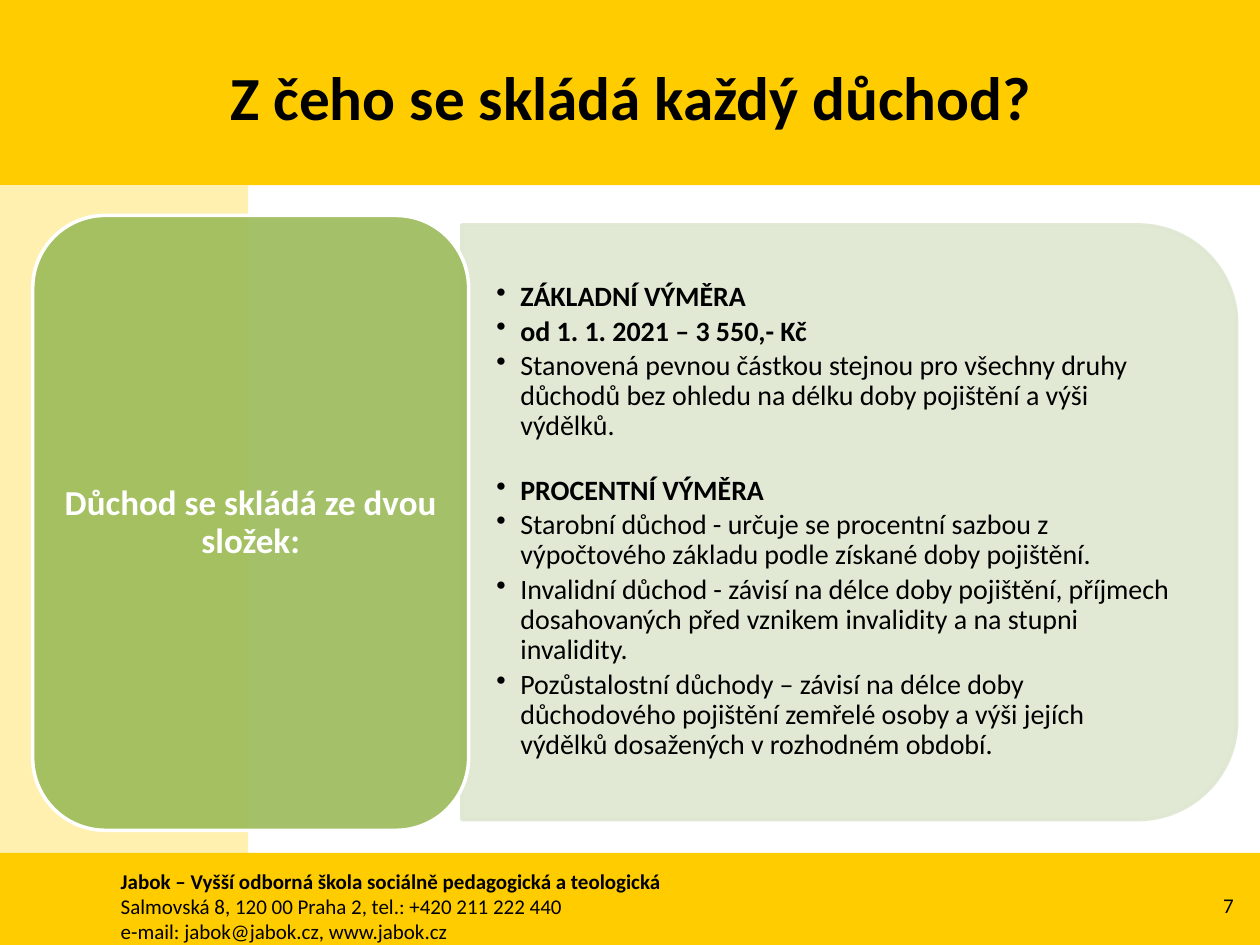
import pptx
import pptx.dml.color
import pptx.enum.shapes
import pptx.enum.text
import pptx.oxml
import pptx.oxml.ns
import pptx.util
from pptx.util import Inches

SHAPE = pptx.enum.shapes.MSO_SHAPE
ALIGN = pptx.enum.text.PP_ALIGN
ANCHOR = pptx.enum.text.MSO_ANCHOR


def color(value):
    return pptx.dml.color.RGBColor.from_string(value)


class PensionSlide:
    """Holds the style and the slide that its elements are drawn on."""

    font = "Calibri"
    band = "FFCC00"
    side = "FFF0AF"
    panel = "DEE7D1"
    accent = "9BBB59"
    ink = "000000"
    paper = "FFFFFF"

    def __init__(self, presentation):
        self.slide = presentation.slides.add_slide(presentation.slide_layouts[6])

    def shape(self, kind, box, fill, opacity=100, outline=None, outline_opacity=100, rotation=0):
        shape = self.slide.shapes.add_shape(kind, *map(Inches, box))
        shape.shadow.inherit = False
        shape.rotation = rotation
        shape.fill.solid()
        shape.fill.fore_color.rgb = color(fill)
        self.fade(shape.fill, opacity)
        if outline:
            shape.line.width = pptx.util.Pt(2)
            shape.line.color.rgb = color(outline)
            self.fade(shape.line.fill, outline_opacity)
        else:
            shape.line.fill.background()

    def fade(self, fill, opacity):
        if opacity < 100:
            tint = fill._xPr.find(".//" + pptx.oxml.ns.qn("a:srgbClr"))
            alpha = pptx.oxml.parse_xml(f'<a:alpha {pptx.oxml.ns.nsdecls("a")} val="{opacity * 1000}"/>')
            tint.append(alpha)

    def text(self, box, lines, size, ink=ink, align=ALIGN.LEFT, anchor=ANCHOR.MIDDLE,
             insets=(0.1, 0.05), spacing=1, bullets=False):
        frame = self.slide.shapes.add_textbox(*map(Inches, box)).text_frame
        frame.word_wrap = True
        frame.vertical_anchor = anchor
        frame.margin_left = frame.margin_right = Inches(insets[0])
        frame.margin_top = frame.margin_bottom = Inches(insets[1])
        for index, (words, bold, after) in enumerate(lines):
            paragraph = frame.add_paragraph() if index else frame.paragraphs[0]
            if bullets:
                self.bullet(paragraph)
            paragraph.alignment = align
            paragraph.line_spacing = spacing
            paragraph.space_after = pptx.util.Pt(after)
            run = paragraph.add_run()
            run.text = words
            run.font.name = self.font
            run.font.size = pptx.util.Pt(size)
            run.font.bold = bold
            run.font.color.rgb = color(ink)

    def bullet(self, paragraph):
        properties = paragraph._p.get_or_add_pPr()
        properties.set("marL", str(Inches(0.19)))
        properties.set("indent", str(Inches(-0.19)))
        properties.append(pptx.oxml.parse_xml(f'<a:buChar {pptx.oxml.ns.nsdecls("a")} char="•"/>'))


def main():
    presentation = pptx.Presentation()
    presentation.slide_width = Inches(10)
    presentation.slide_height = Inches(7.5)
    page = PensionSlide(presentation)

    page.shape(SHAPE.RECTANGLE, (0, 0, 10, 1.47), page.band)
    page.shape(SHAPE.RECTANGLE, (0, 1.47, 1.97, 5.3), page.side)
    page.shape(SHAPE.RECTANGLE, (0, 6.77, 10, 0.73), page.band)

    school = [
        ("Jabok – Vyšší odborná škola sociálně pedagogická a teologická", True, 0),
        ("Salmovská 8, 120 00 Praha 2, tel.: +420 211 222 440", False, 0),
        ("e-mail: jabok@jabok.cz, www.jabok.cz", False, 0),
    ]
    page.text((0.86, 6.84, 8.19, 0.71), school, 12, anchor=ANCHOR.TOP)
    page.text((9.26, 6.98, 0.63, 0.4), [("7", False, 0)], 12, align=ALIGN.RIGHT)
    page.text((0.51, 0.14, 9, 1.25), [("Z čeho se skládá každý důchod?", True, 0)], 35,
              align=ALIGN.CENTER)

    page.shape(SHAPE.ROUND_2_SAME_RECTANGLE, (4.38, 1.07, 4.72, 6.15), page.panel, opacity=90,
               outline=page.panel, outline_opacity=90, rotation=90)
    gap, section_gap = 2.4, 19.5
    components = [
        ("ZÁKLADNÍ VÝMĚRA", True, gap),
        ("od 1. 1. 2021 – 3 550,- Kč", True, gap),
        ("Stanovená pevnou částkou stejnou pro všechny druhy důchodů bez ohledu na délku "
         "doby pojištění a výši výdělků.", False, section_gap),
        ("PROCENTNÍ VÝMĚRA", True, gap),
        ("Starobní důchod - určuje se procentní sazbou z výpočtového základu podle získané "
         "doby pojištění.", False, gap),
        ("Invalidní důchod - závisí na délce doby pojištění, příjmech dosahovaných před "
         "vznikem invalidity a na stupni invalidity.", False, gap),
        ("Pozůstalostní důchody – závisí na délce doby důchodového pojištění zemřelé osoby "
         "a výši jejích výdělků dosažených v rozhodném období.", False, gap),
    ]
    page.text((3.67, 2.01, 5.92, 4.26), components, 16, insets=(0.27, 0.14), spacing=0.9,
              bullets=True)

    page.shape(SHAPE.ROUNDED_RECTANGLE, (0.26, 1.71, 3.46, 4.88), page.accent, opacity=90,
               outline=page.paper)
    page.text((0.43, 1.88, 3.12, 4.54), [("Důchod se skládá ze dvou složek:", True, 7)], 20,
              ink=page.paper, align=ALIGN.CENTER, insets=(0.08, 0.04), spacing=0.9)

    presentation.save("out.pptx")


if __name__ == "__main__":
    main()
